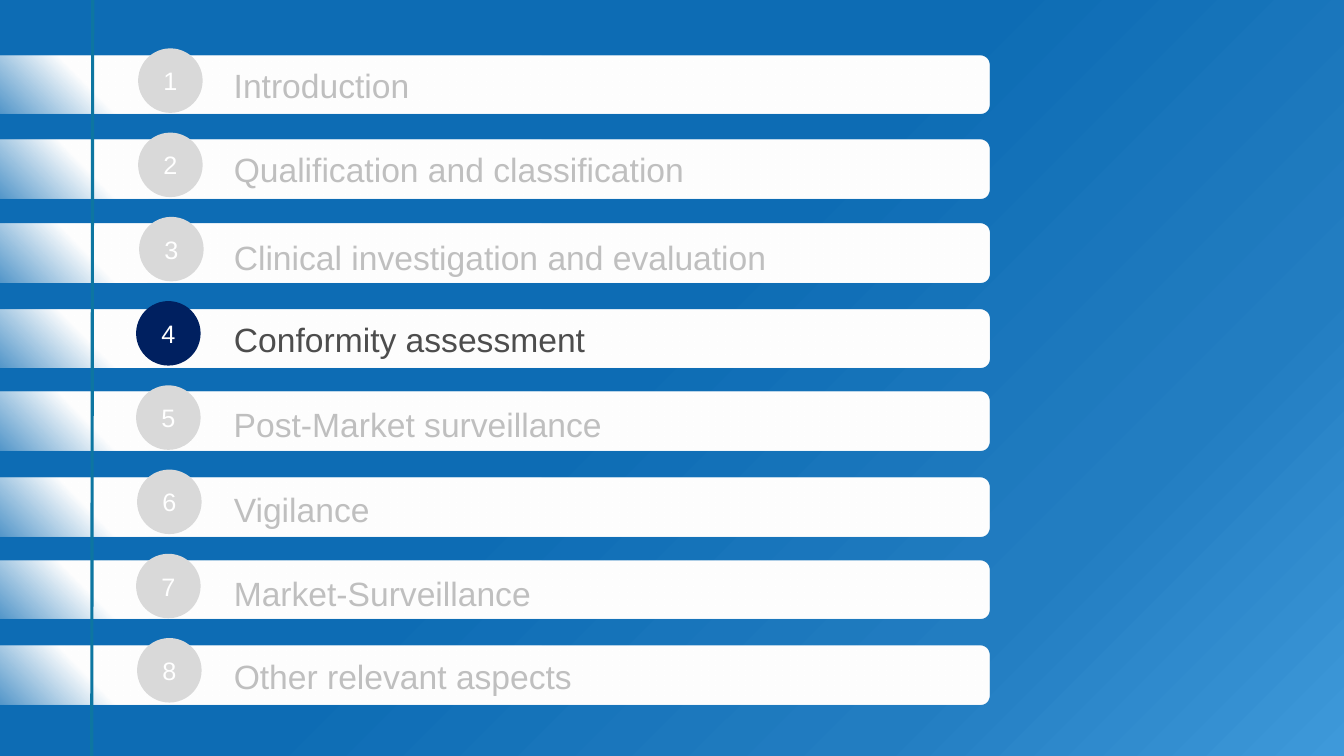
import dataclasses
from typing import Any

import lxml.etree
import pptx
import pptx.dml.color
import pptx.enum.shapes
import pptx.enum.text
import pptx.oxml
import pptx.oxml.ns
import pptx.util

Inches = pptx.util.Inches
Pt = pptx.util.Pt
RGBColor = pptx.dml.color.RGBColor
Shape = pptx.enum.shapes.MSO_SHAPE
Align = pptx.enum.text.PP_ALIGN

WHITE = RGBColor(0xFF, 0xFF, 0xFF)
DEEP_BLUE = RGBColor(0x0D, 0x6C, 0xB4)
MID_BLUE = RGBColor(0x22, 0x7D, 0xC1)
LIGHT_BLUE = RGBColor(0x3E, 0x99, 0xDA)
NAVY = RGBColor(0x00, 0x20, 0x60)
TEAL = RGBColor(0x0D, 0x76, 0xA1)
YELLOW = RGBColor(0xFF, 0xD1, 0x29)
BADGE_GREY = RGBColor(0xD9, 0xD9, 0xD9)
LABEL_GREY = RGBColor(0xBF, 0xBF, 0xBF)
LABEL_DARK = RGBColor(0x4D, 0x4D, 0x4D)

SLIDE_WIDTH, SLIDE_HEIGHT = 13.33, 7.5
BADGE_SIZE = 0.64
BADGE_TOP, BADGE_SPAN = 0.48, 5.85
LABEL_LEFT = 2.22


@dataclasses.dataclass(frozen=True)
class Stop:
    position: int
    color: RGBColor
    alpha: int = 100


@dataclasses.dataclass(frozen=True)
class Section:
    label: str
    bar_top: float
    badge_left: float
    label_top: float
    label_width: float
    label_height: float
    inset_top: float = 0.05
    active: bool = False


SECTIONS = [
    Section("Introduction", 0.55, 1.37, 0.6, 5.9, 0.48),
    Section("Qualification and classification", 1.39, 1.37, 1.45, 6.88, 0.46),
    Section("Clinical investigation and evaluation", 2.22, 1.38, 2.25, 6.72, 0.54, 0.1),
    Section("Conformity assessment", 3.07, 1.35, 3.18, 7.25, 0.37, active=True),
    Section("Post-Market surveillance", 3.89, 1.35, 3.99, 10.83, 0.38, 0.1),
    Section("Vigilance", 4.74, 1.36, 4.76, 10.92, 0.53, 0.1),
    Section("Market-Surveillance", 5.56, 1.35, 5.61, 7.75, 0.54),
    Section("Other relevant aspects", 6.41, 1.36, 6.43, 5.69, 0.5, 0.1),
]
PAGE_STOPS = [Stop(47, DEEP_BLUE), Stop(77, MID_BLUE), Stop(100, LIGHT_BLUE)]
BAR_STOPS = [Stop(0, WHITE, 0), Stop(15, WHITE), Stop(100, WHITE)]


def apply_formats(target: Any, formats: dict[str, Any]) -> None:
    for name, value in formats.items():
        setattr(target, name, value)


def add_plain_shape(page: Any, kind: Any, left: float, top: float,
                    width: float, height: float) -> Any:
    shape = page.shapes.add_shape(
        kind, Inches(left), Inches(top), Inches(width), Inches(height))
    shape.shadow.inherit = False
    shape.line.fill.background()
    return shape


def fill_radial(shape: Any, stops: list[Stop], focus: dict[str, int]) -> None:
    stop_xml = "".join(
        f'<a:gs pos="{stop.position * 1000}"><a:srgbClr val="{stop.color}">'
        f'<a:alpha val="{stop.alpha * 1000}"/></a:srgbClr></a:gs>'
        for stop in stops)
    focus_xml = " ".join(f'{side}="{share * 1000}"' for side, share in focus.items())
    gradient = pptx.oxml.parse_xml(
        f'<a:gradFill {pptx.oxml.ns.nsdecls("a")} rotWithShape="1">'
        f'<a:gsLst>{stop_xml}</a:gsLst><a:path path="circle">'
        f'<a:fillToRect {focus_xml}/></a:path></a:gradFill>')
    shape.fill.background()
    properties = shape.element.spPr
    properties.replace(properties.find(pptx.oxml.ns.qn("a:noFill")), gradient)


def add_rail(page: Any, end_left: float, end_top: float, color: RGBColor) -> None:
    rail = page.shapes.add_connector(
        pptx.enum.shapes.MSO_CONNECTOR.STRAIGHT,
        Inches(0.92), Inches(0), Inches(end_left), Inches(end_top))
    rail.line.color.rgb = color
    rail.line.width = Pt(2.25)
    lxml.etree.SubElement(rail.element.spPr, pptx.oxml.ns.qn("a:effectLst"))


def write_text(box: Any, text: str, size: int, color: RGBColor,
               frame_formats: dict[str, Any], para_formats: dict[str, Any]) -> None:
    frame = box.text_frame
    apply_formats(frame, {
        "vertical_anchor": pptx.enum.text.MSO_ANCHOR.MIDDLE,
        "auto_size": pptx.enum.text.MSO_AUTO_SIZE.NONE,
        **frame_formats,
    })
    para = frame.paragraphs[0]
    apply_formats(para, para_formats)
    span = para.add_run()
    span.text = text
    apply_formats(span.font, {"name": "Arial", "size": Pt(size)})
    span.font.color.rgb = color


def add_bar(page: Any, section: Section) -> None:
    bar = add_plain_shape(page, Shape.ROUNDED_RECTANGLE, -0.46, section.bar_top, 10.27, 0.58)
    fill_radial(bar, BAR_STOPS, {"l": 0, "t": 100, "r": 100, "b": 0})


def add_badge(page: Any, index: int, section: Section) -> None:
    top = BADGE_TOP + BADGE_SPAN * index / (len(SECTIONS) - 1)
    badge = add_plain_shape(page, Shape.OVAL, section.badge_left, top, BADGE_SIZE, BADGE_SIZE)
    badge.fill.solid()
    badge.fill.fore_color.rgb = NAVY if section.active else BADGE_GREY
    write_text(badge, str(index + 1), 18, WHITE, {}, {"alignment": Align.CENTER})


def add_label(page: Any, section: Section) -> None:
    place = {
        "left": Inches(LABEL_LEFT), "top": Inches(section.label_top),
        "width": Inches(section.label_width), "height": Inches(section.label_height),
    }
    if section.active:
        box = page.shapes.title
        apply_formats(box, place)
        page.shapes.element.append(box.element)
    else:
        box = page.shapes.add_textbox(*place.values())
    write_text(
        box, section.label, 24, LABEL_DARK if section.active else LABEL_GREY,
        {"word_wrap": True, "margin_top": Inches(section.inset_top)},
        {"alignment": Align.LEFT, "space_after": Pt(18)})


def main() -> None:
    deck = pptx.Presentation()
    apply_formats(deck, {
        "slide_width": Inches(SLIDE_WIDTH), "slide_height": Inches(SLIDE_HEIGHT)})
    page = deck.slides.add_slide(deck.slide_layouts.get_by_name("Title Only"))
    backdrop = add_plain_shape(page, Shape.RECTANGLE, 0, 0, SLIDE_WIDTH, SLIDE_HEIGHT)
    fill_radial(backdrop, PAGE_STOPS, {"l": 0, "t": 0, "r": 100, "b": 100})
    add_rail(page, 0.92, 3.8, YELLOW)
    for section in SECTIONS:
        add_bar(page, section)
    for index, section in enumerate(SECTIONS):
        add_badge(page, index, section)
    add_rail(page, 0.91, SLIDE_HEIGHT, TEAL)
    for section in SECTIONS:
        add_label(page, section)
    deck.save("out.pptx")


if __name__ == "__main__":
    main()
